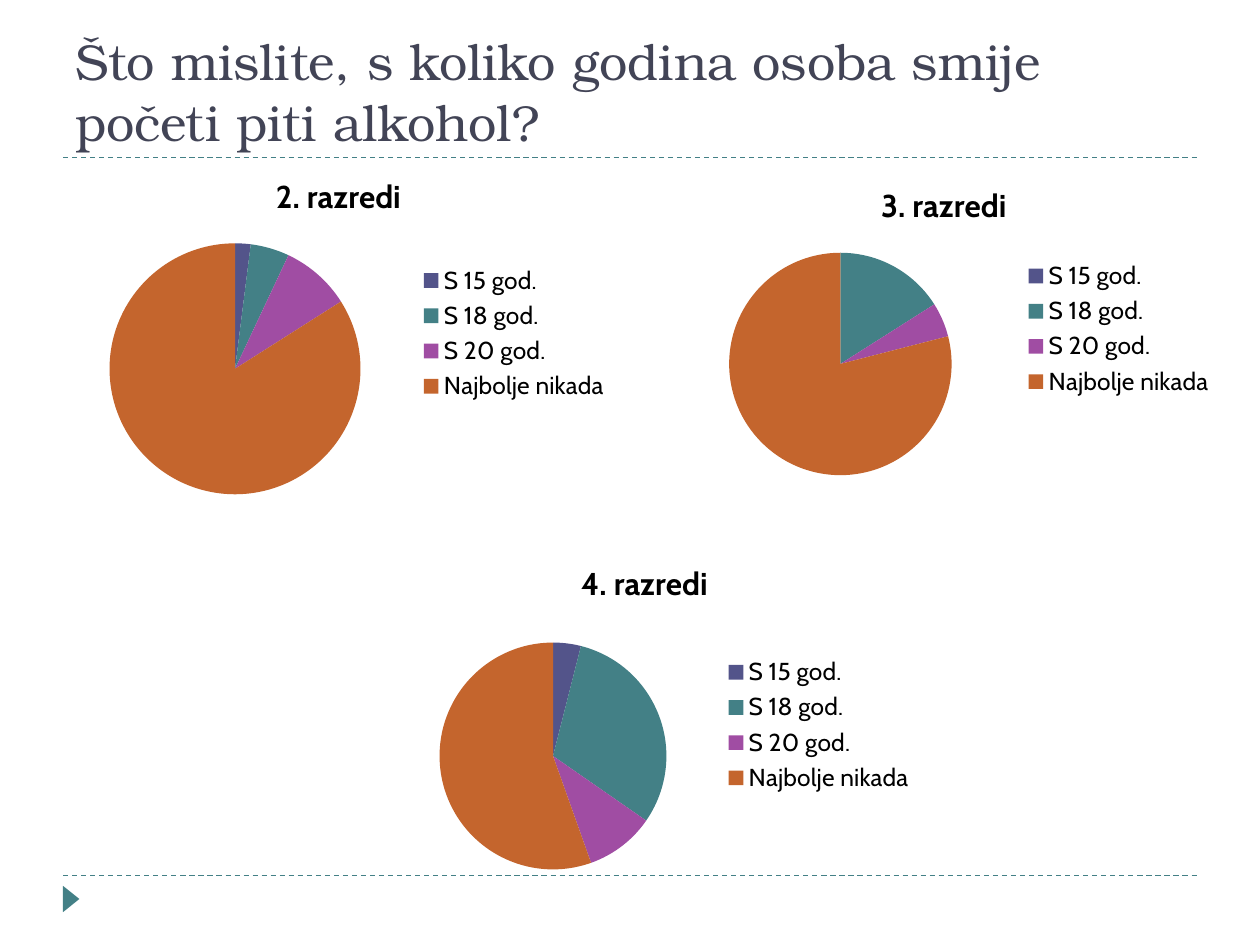
from dataclasses import dataclass
from typing import Optional

import lxml.etree
import pptx
import pptx.chart.data
import pptx.dml.color
import pptx.enum.chart
import pptx.enum.dml
import pptx.enum.shapes
import pptx.enum.text
import pptx.oxml
import pptx.oxml.ns
import pptx.util
from pptx.util import Pt

TITLE_FONT = "TeX Gyre Bonum"
CHART_FONT = "Cabin"
TEAL = "438086"
ANSWERS = ["S 15 god.", "S 18 god.", "S 20 god.", "Najbolje nikada"]
ANSWER_COLORS = ["53548A", TEAL, "A04DA3", "C4652D"]


@dataclass
class GradePie:
    title: str
    values: list[Optional[int]]
    left: float
    top: float
    width: float
    height: float
    plot: Optional[tuple[float, float, float, float]] = None


GRADE_PIES = [
    GradePie("3. razredi", [None, 16, 5, 79], 377.3, 94.3, 324, 187.2),
    GradePie("4. razredi", [4, 31, 10, 56], 206.6, 309.6, 323.3, 209.5,
             (0.035, 0.275, 0.607, 0.619)),
    GradePie("2. razredi", [2, 5, 9, 84], 31, 88.6, 324.7, 203.8),
]


def rgb(color: str) -> pptx.dml.color.RGBColor:
    return pptx.dml.color.RGBColor.from_string(color)


def style_font(font, name: str, size: float, color: str, bold: bool = False) -> None:
    font.name = name
    font.size = Pt(size)
    font.bold = bold
    font.color.rgb = rgb(color)


def add_dashed_rule(slide, top: float) -> None:
    line = slide.shapes.add_connector(
        pptx.enum.shapes.MSO_CONNECTOR.STRAIGHT, Pt(36), Pt(top), Pt(684), Pt(top))
    line.line.color.rgb = rgb(TEAL)
    line.line.width = Pt(0.75)
    line.line.dash_style = pptx.enum.dml.MSO_LINE.DASH
    properties = line._element.spPr
    lxml.etree.SubElement(properties, pptx.oxml.ns.qn("a:effectLst"))


def add_corner_triangle(slide) -> None:
    triangle = slide.shapes.add_shape(
        pptx.enum.shapes.MSO_SHAPE.ISOSCELES_TRIANGLE, Pt(33.1), Pt(509), Pt(15.1), Pt(9.4))
    triangle.rotation = 90
    triangle.shadow.inherit = False
    triangle.fill.solid()
    triangle.fill.fore_color.rgb = rgb(TEAL)
    triangle.line.fill.background()


def add_title(slide, text: str) -> None:
    box = slide.shapes.add_textbox(Pt(36), Pt(12.2), Pt(648), Pt(77.8))
    frame = box.text_frame
    frame.word_wrap = True
    frame.vertical_anchor = pptx.enum.text.MSO_ANCHOR.BOTTOM
    frame.text = text
    style_font(frame.paragraphs[0].runs[0].font, TITLE_FONT, 28.8, "424456")


def place_plot(chart, plot: tuple[float, float, float, float]) -> None:
    """Fix the inner plot area as fractions of the chart: x, y, width, height."""
    plot_area = chart._chartSpace.chart.plotArea
    for old_layout in plot_area.findall(pptx.oxml.ns.qn("c:layout")):
        plot_area.remove(old_layout)
    settings = [("layoutTarget", "inner"), ("xMode", "edge"), ("yMode", "edge"),
                *zip("xywh", plot)]
    children = "".join(f'<c:{tag} val="{value}"/>' for tag, value in settings)
    layout = pptx.oxml.parse_xml(
        f'<c:layout {pptx.oxml.ns.nsdecls("c")}>'
        f"<c:manualLayout>{children}</c:manualLayout></c:layout>")
    plot_area.insert(0, layout)


def add_grade_pie(slide, pie: GradePie) -> None:
    data = pptx.chart.data.CategoryChartData()
    data.categories = ANSWERS
    data.add_series(pie.title, pie.values)
    chart = slide.shapes.add_chart(
        pptx.enum.chart.XL_CHART_TYPE.PIE,
        Pt(pie.left), Pt(pie.top), Pt(pie.width), Pt(pie.height), data).chart
    style_font(chart.font, CHART_FONT, 18, "000000")

    chart.has_title = True
    title_frame = chart.chart_title.text_frame
    title_frame.text = pie.title
    style_font(title_frame.paragraphs[0].runs[0].font, CHART_FONT, 18, "000000", bold=True)
    chart.chart_title.include_in_layout = False

    chart.has_legend = True
    chart.legend.position = pptx.enum.chart.XL_LEGEND_POSITION.RIGHT
    chart.legend.include_in_layout = False
    style_font(chart.legend.font, CHART_FONT, 14, "000000")

    chart.plots[0].vary_by_categories = True
    for index, color in enumerate(ANSWER_COLORS):
        fill = chart.plots[0].series[0].points[index].format.fill
        fill.solid()
        fill.fore_color.rgb = rgb(color)
    if pie.plot:
        place_plot(chart, pie.plot)


def main() -> None:
    presentation = pptx.Presentation()
    presentation.slide_width = Pt(720)
    presentation.slide_height = Pt(540)
    slide = presentation.slides.add_slide(presentation.slide_layouts[6])
    for top in (500.4, 90):
        add_dashed_rule(slide, top)
    add_corner_triangle(slide)
    add_title(slide, "Što mislite, s koliko godina osoba smije početi piti alkohol?")
    for pie in GRADE_PIES:
        add_grade_pie(slide, pie)
    presentation.save("out.pptx")


if __name__ == "__main__":
    main()
